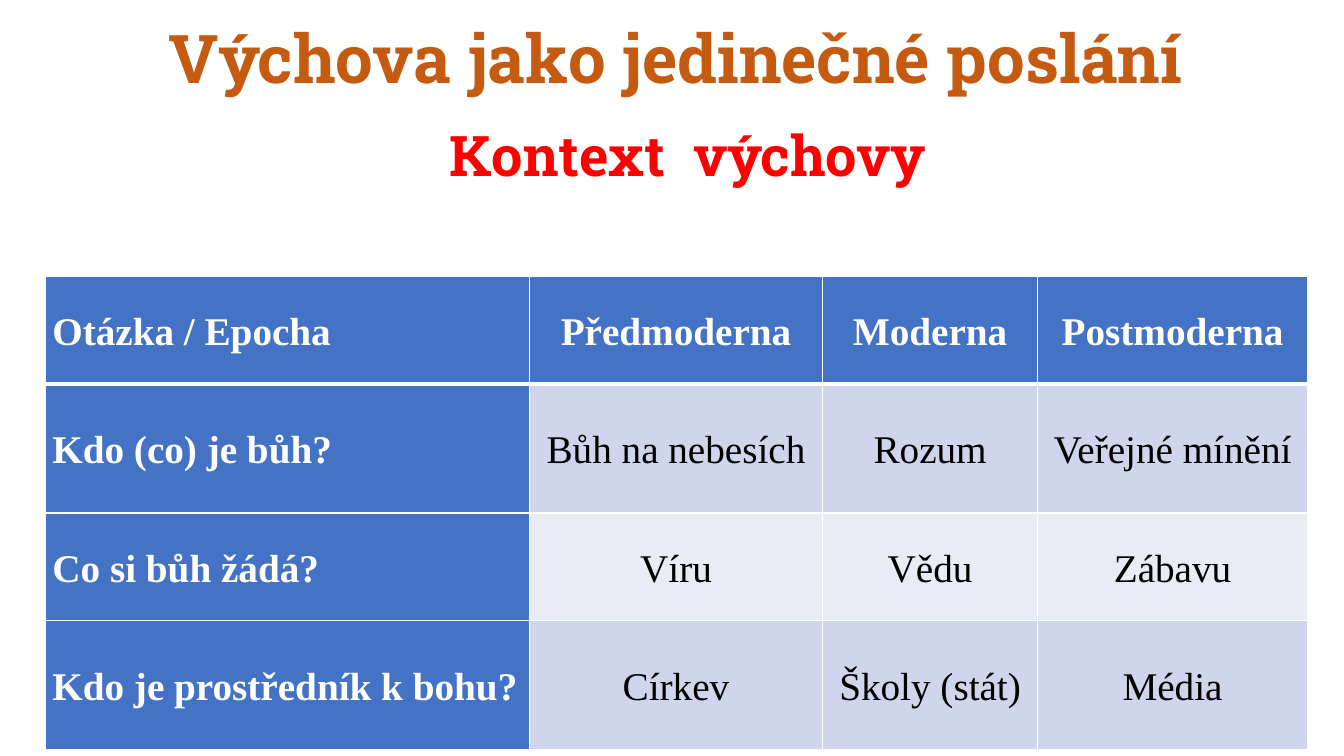
from lxml.etree import SubElement
from pptx import Presentation
from pptx.dml.color import RGBColor as RGB
from pptx.enum.text import MSO_ANCHOR as ANCHOR, PP_ALIGN as ALIGN
from pptx.oxml.ns import qn
from pptx.util import Pt

PX = 9144
SLAB, SERIF = "Roboto Slab", "Times New Roman"
COLORS = {
    "title": "C55A11",
    "subtitle": "FF0000",
    "head": "4472C4",
    "odd": "CFD5EA",
    "even": "E9EBF5",
    "light": "FFFFFF",
    "dark": "000000",
}
COL_WIDTHS = [480, 291, 213, 268]
ROW_HEIGHTS = [107, 128, 107, 128]
ROWS = [
    ["Otázka / Epocha", "Předmoderna", "Moderna", "Postmoderna"],
    ["Kdo (co) je bůh?", "Bůh na nebesích", "Rozum", "Veřejné mínění"],
    ["Co si bůh žádá?", "Víru", "Vědu", "Zábavu"],
    ["Kdo je prostředník k bohu?", "Církev", "Školy (stát)", "Média"],
]


def px(*lengths):
    """Turn px lengths into EMU."""
    return [n * PX for n in lengths]


def write(tf, text, size, font, color, bold=True, align=ALIGN.CENTER, spacing=1.0):
    """Write one styled run into the first paragraph of a text frame."""
    p = tf.paragraphs[0]
    p.alignment, p.line_spacing = align, spacing
    r = p.add_run()
    r.text = text
    r.font.size, r.font.name, r.font.bold = Pt(size), font, bold
    r.font.color.rgb = RGB.from_string(COLORS[color])


def add_heading(s, box, text, size, color, anchor, spacing):
    """Place a centred heading line in the given box."""
    tf = s.shapes.add_textbox(*px(*box)).text_frame
    tf.word_wrap, tf.vertical_anchor = True, anchor
    write(tf, text, size, SLAB, color, spacing=spacing)


def add_borders(cell, widths):
    """Draw white cell borders with a width in points for each side."""
    tcPr = cell._tc.get_or_add_tcPr()
    for side, width in widths.items():
        ln = SubElement(tcPr, qn(f"a:ln{side}"), w=str(Pt(width)))
        fill = SubElement(ln, qn("a:solidFill"))
        SubElement(fill, qn("a:srgbClr"), val=COLORS["light"])


def fill_cell(cell, row, col):
    """Style and fill one cell according to its row and column."""
    is_head = row == 0 or col == 0
    cell.vertical_anchor = ANCHOR.MIDDLE
    cell.margin_left, cell.margin_top, cell.margin_right, cell.margin_bottom = px(7, 1, 7, 0)
    add_borders(cell, {"L": 1, "R": 1, "T": 3 if row == 1 else 1, "B": 3 if row == 0 else 1})
    cell.fill.solid()
    band = "head" if is_head else "odd" if row % 2 else "even"
    cell.fill.fore_color.rgb = RGB.from_string(COLORS[band])
    write(cell.text_frame, ROWS[row][col], 28, SERIF, "light" if is_head else "dark",
          is_head, ALIGN.CENTER if col else ALIGN.JUSTIFY, 1.07)


def add_epoch_table(s, left, top):
    """Place the table of questions and epochs at the given corner."""
    box = px(left, top, sum(COL_WIDTHS), sum(ROW_HEIGHTS))
    table = s.shapes.add_table(len(ROW_HEIGHTS), len(COL_WIDTHS), *box).table
    table.first_col = True
    for column, width in zip(table.columns, px(*COL_WIDTHS)):
        column.width = width
    for row, height in zip(table.rows, px(*ROW_HEIGHTS)):
        row.height = height
    for row in range(len(ROW_HEIGHTS)):
        for col in range(len(COL_WIDTHS)):
            fill_cell(table.cell(row, col), row, col)


def main():
    """Build the slide and save it."""
    prs = Presentation()
    prs.slide_width, prs.slide_height = px(1333, 750)
    s = prs.slides.add_slide(prs.slide_layouts[6])
    add_heading(s, (68, 0, 1205, 123), "Výchova jako jedinečné poslání", 48, "title",
                ANCHOR.MIDDLE, 0.9)
    add_heading(s, (155, 115, 1055, 77), "Kontext  výchovy", 40, "subtitle", ANCHOR.TOP, 1.0)
    add_epoch_table(s, 45, 274)
    prs.save("out.pptx")


if __name__ == "__main__":
    main()
